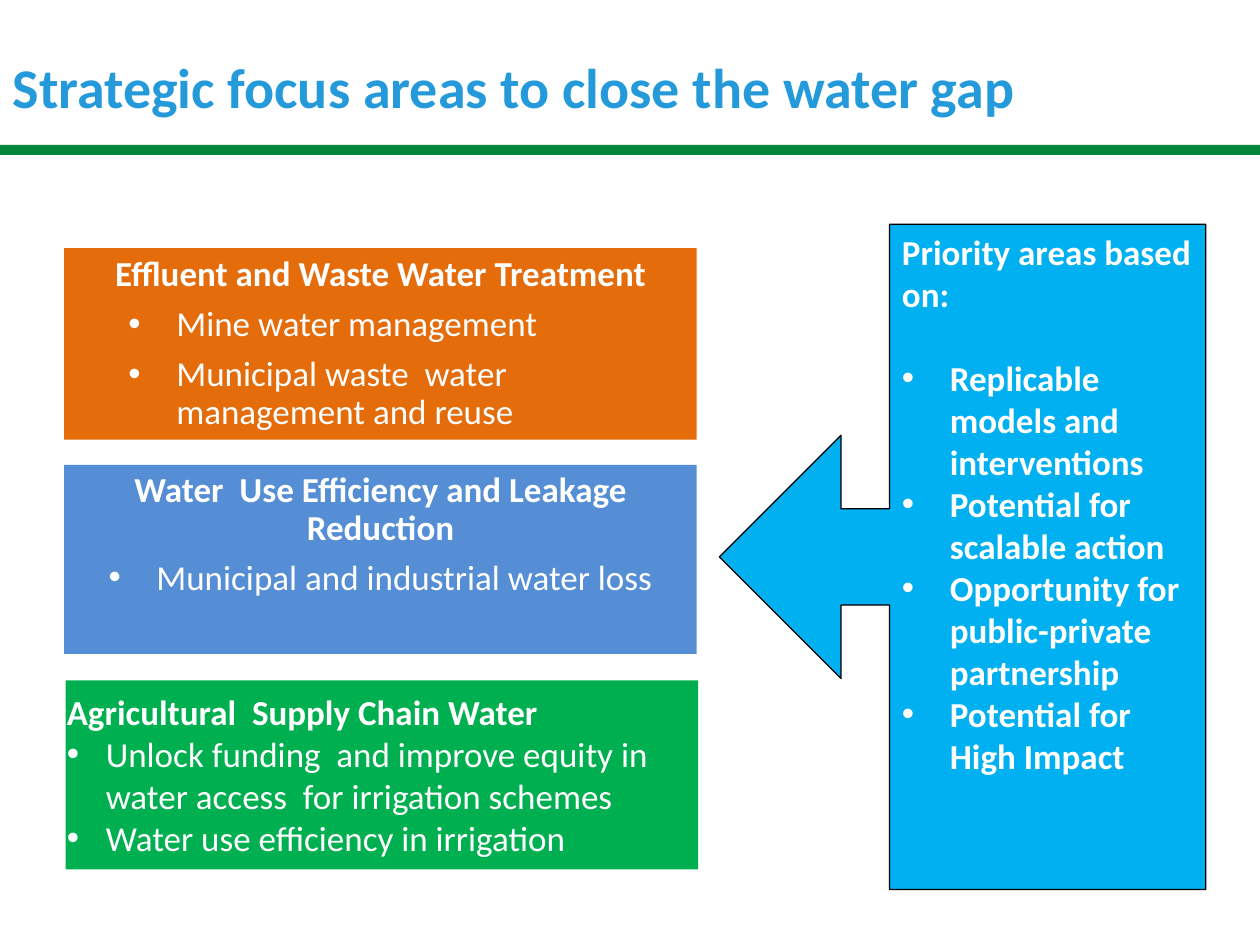
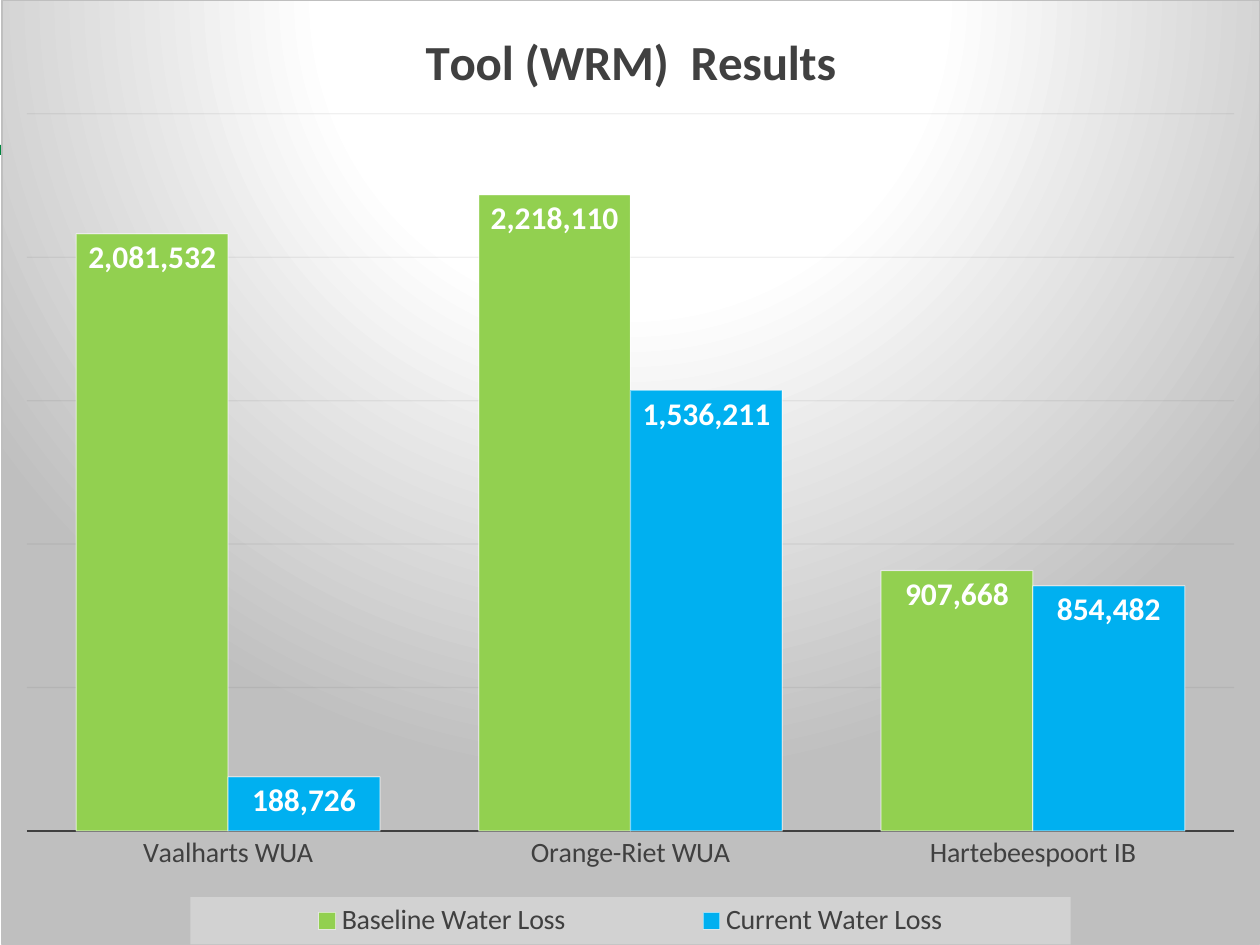
import pptx
import pptx.chart.data
import pptx.dml.color
import pptx.enum.chart
import pptx.enum.shapes
import pptx.enum.text
import pptx.oxml
import pptx.oxml.ns
import pptx.util

Inches = pptx.util.Inches
Pt = pptx.util.Pt
RGB = pptx.dml.color.RGBColor
Align = pptx.enum.text.PP_ALIGN
Anchor = pptx.enum.text.MSO_ANCHOR
Shape = pptx.enum.shapes.MSO_SHAPE
qn = pptx.oxml.ns.qn

FONT = "Calibri"
WHITE = RGB(0xFF, 0xFF, 0xFF)
BLACK = RGB(0, 0, 0)
INK = RGB(0x40, 0x40, 0x40)
GRID = RGB(0x0D, 0x0D, 0x0D)
GREEN = RGB(0x00, 0x86, 0x3D)
TITLE = RGB(0x24, 0x9A, 0xDA)
ORANGE = RGB(0xE4, 0x6C, 0x0A)
BLUE = RGB(0x55, 0x8E, 0xD5)
LEAF = RGB(0x00, 0xB0, 0x50)
SKY = RGB(0x00, 0xB0, 0xF0)
LIME = RGB(0x92, 0xD0, 0x50)


def style(font, size, color, bold=False):
    font.name, font.size, font.bold = FONT, Pt(size), bold
    font.color.rgb = color


def add_block(slide, kind, box, fill):
    shape = slide.shapes.add_shape(kind, *map(Inches, box))
    shape.shadow.inherit = False
    shape.fill.solid()
    shape.fill.fore_color.rgb = fill
    shape.line.fill.background()
    return shape


def add_band(slide):
    add_block(slide, Shape.RECTANGLE, (0, 1.15, 10, 0.08), GREEN)


def add_title(slide, text):
    title = slide.shapes.title
    title.left, title.top, title.width, title.height = map(
        Inches, (0, 0.36, 9.76, 0.79))
    title.text_frame.vertical_anchor = Anchor.MIDDLE
    title.text_frame.margin_bottom = Inches(0.19)
    para = title.text_frame.paragraphs[0]
    para.alignment = Align.LEFT
    run = para.add_run()
    run.text = text
    style(run.font, 32, TITLE, True)


def indent(para, left, hang):
    """Give a paragraph a round bullet with a hanging indent."""
    props = para._p.get_or_add_pPr()
    props.set("marL", str(Inches(left)))
    props.set("indent", str(-Inches(hang)))
    props.append(pptx.oxml.parse_xml(
        f'<a:buFont {pptx.oxml.ns.nsdecls("a")} typeface="Arial"/>'))
    props.append(pptx.oxml.parse_xml(
        f'<a:buChar {pptx.oxml.ns.nsdecls("a")} char="•"/>'))


def fill_text(frame, head, items, left, hang, bold=False,
              aligns=(Align.LEFT, Align.LEFT), tight=False, gap=0):
    """Write a bold heading and its bullets; gap parts the two."""
    frame.word_wrap = True
    for num, text in enumerate([head, *items]):
        para = frame.add_paragraph() if num else frame.paragraphs[0]
        para.alignment = aligns[min(num, 1)]
        if tight:
            para.line_spacing = 0.9
            para.space_after = Pt(7)
        if num == 1 and gap:
            para.space_before = Pt(gap)
        if num:
            indent(para, left, hang)
        run = para.add_run()
        run.text = text
        style(run.font, 20, WHITE, bold or num == 0)


def add_area(slide, box, fill, head, items, foot=0.01, **look):
    shape = add_block(slide, Shape.RECTANGLE, box, fill)
    frame = shape.text_frame
    frame.margin_left = frame.margin_right = frame.margin_top = Inches(0.01)
    frame.margin_bottom = Inches(foot)
    frame.vertical_anchor = Anchor.MIDDLE
    fill_text(frame, head, items, **look)


def add_callout(slide, box, head, items):
    shape = add_block(slide, Shape.LEFT_ARROW_CALLOUT, box, SKY)
    for num, value in enumerate((0.198, 0.25, 0.25, 0.65)):
        shape.adjustments[num] = value
    shape.line.color.rgb = BLACK
    shape.line.width = Pt(0.75)
    shape.text_frame.vertical_anchor = Anchor.TOP
    fill_text(shape.text_frame, head, items, 0.38, 0.38, bold=True, gap=24)


def focus_slide(deck):
    slide = deck.slides.add_slide(deck.slide_layouts[5])
    add_band(slide)
    add_title(slide, "Strategic focus areas to close the water gap")
    add_area(slide, (0.51, 1.97, 5.02, 1.52), ORANGE,
             "Effluent and Waste Water Treatment",
             ["Mine water management",
              "Municipal waste  water management and reuse"],
             left=0.88, hang=0.38, tight=True,
             aligns=(Align.CENTER, Align.LEFT))
    add_area(slide, (0.51, 3.69, 5.02, 1.5), BLUE,
             "Water  Use Efficiency and Leakage Reduction",
             ["Municipal and industrial water loss"],
             foot=0.4, left=0.38, hang=0.38, tight=True,
             aligns=(Align.CENTER, Align.CENTER))
    add_area(slide, (0.52, 5.4, 5.02, 1.5), LEAF,
             "Agricultural  Supply Chain Water",
             ["Unlock funding  and improve equity in water access  "
              "for irrigation schemes",
              "Water use efficiency in irrigation"],
             left=0.31, hang=0.31)
    add_callout(slide, (5.71, 1.78, 3.86, 5.28), "Priority areas based on:",
                ["Replicable models and interventions",
                 "Potential for scalable action",
                 "Opportunity for public-private partnership",
                 "Potential for High Impact"])


def fade_line(node, share):
    """Make the line colours under a chart node partly transparent."""
    for color in node.iterfind(f".//{qn('a:ln')}//{qn('a:srgbClr')}"):
        alpha = color.makeelement(qn("a:alpha"), {"val": str(share * 1000)})
        color.append(alpha)


def place(node, spot, after=None):
    """Fix a chart part at shares of the chart area."""
    for old in node.findall(qn("c:layout")):
        node.remove(old)
    target = "" if after else '<c:layoutTarget val="inner"/>'
    sizes = "".join(f'<c:{tag} val="{val}"/>' for tag, val in
                    zip("xywh", spot))
    layout = pptx.oxml.parse_xml(
        f'<c:layout {pptx.oxml.ns.nsdecls("c")}><c:manualLayout>{target}'
        f'<c:xMode val="edge"/><c:yMode val="edge"/>{sizes}'
        '</c:manualLayout></c:layout>')
    if after:
        node.find(qn(after)).addnext(layout)
    else:
        node.insert(0, layout)


def shade(chart):
    """Give the chart area a grey glow and the legend a pale panel."""
    names = pptx.oxml.ns.nsdecls("c", "a")
    stops = "".join(
        f'<a:gs pos="{spot * 1000}"><a:srgbClr val="{color}"/></a:gs>'
        for spot, color in ((0, "FFFFFF"), (39, "FFFFFF"), (100, "BFBFBF")))
    back = pptx.oxml.parse_xml(
        f'<c:spPr {names}><a:gradFill><a:gsLst>{stops}</a:gsLst>'
        '<a:path path="circle"><a:fillToRect l="50000" t="-80000" '
        'r="50000" b="180000"/></a:path></a:gradFill><a:ln w="9525">'
        '<a:solidFill><a:srgbClr val="BFBFBF"/></a:solidFill></a:ln></c:spPr>')
    chart._chartSpace.find(qn("c:chart")).addnext(back)
    panel = pptx.oxml.parse_xml(
        f'<c:spPr {names}><a:solidFill><a:srgbClr val="F2F2F2">'
        '<a:alpha val="39000"/></a:srgbClr></a:solidFill></c:spPr>')
    chart.legend._element.find(qn("c:overlay")).addnext(panel)


def style_axes(chart):
    cats, vals = chart.category_axis, chart.value_axis
    cats.major_tick_mark = pptx.enum.chart.XL_TICK_MARK.NONE
    style(cats.tick_labels.font, 16, INK)
    cats.format.line.color.rgb = INK
    cats.format.line.width = Pt(1.5)
    vals.visible = False
    vals.minimum_scale, vals.maximum_scale = 0, 2500000
    vals.major_unit = 500000
    vals.tick_labels.number_format = "#,##0"
    vals.tick_labels.number_format_is_linked = False
    grid = vals.major_gridlines.format.line
    grid.color.rgb, grid.width = GRID, Pt(0.75)
    fade_line(vals._element, 6)


def style_bars(plot):
    plot.gap_width, plot.overlap = 65, 0
    plot.vary_by_categories = False
    for series, color in zip(plot.series, (LIME, SKY)):
        series.format.fill.solid()
        series.format.fill.fore_color.rgb = color
        series.format.line.color.rgb = WHITE
        series.format.line.width = Pt(0.75)
        fade_line(series._element, 50)
        labels = series.data_labels
        labels.show_value = True
        labels.position = pptx.enum.chart.XL_LABEL_POSITION.INSIDE_END
        labels.number_format = "#,##0"
        labels.number_format_is_linked = False
        style(labels.font, 18, WHITE, True)


def add_results(slide, box):
    data = pptx.chart.data.CategoryChartData(number_format="#,##0")
    data.categories = ["Vaalharts WUA", "Orange-Riet WUA", "Hartebeespoort IB"]
    data.add_series("Baseline Water Loss", (2081532, 2218110, 907668))
    data.add_series("Current Water Loss", (188726, 1536211, 854482))
    chart = slide.shapes.add_chart(
        pptx.enum.chart.XL_CHART_TYPE.COLUMN_CLUSTERED,
        *map(Inches, box), data).chart
    style(chart.font, 10, BLACK)
    chart.has_title = True
    run = chart.chart_title.text_frame.paragraphs[0].add_run()
    run.text = "Tool (WRM)  Results"
    style(run.font, 28, INK, True)
    chart.has_legend = True
    chart.legend.position = pptx.enum.chart.XL_LEGEND_POSITION.BOTTOM
    chart.legend.include_in_layout = False
    style(chart.legend.font, 16, INK)
    style_axes(chart)
    style_bars(chart.plots[0])
    shade(chart)
    place(chart._chartSpace.chart.plotArea, (0.02, 0.12, 0.96, 0.76))
    place(chart.chart_title._element, (0.33, 0.02), "c:tx")
    place(chart.legend._element, (0.15, 0.95, 0.7, 0.05), "c:legendPos")


def results_slide(deck):
    slide = deck.slides.add_slide(deck.slide_layouts[6])
    add_band(slide)
    add_results(slide, (0.01, 0, 9.99, 7.5))


def main():
    deck = pptx.Presentation()
    deck.slide_width, deck.slide_height = Inches(10), Inches(7.5)
    focus_slide(deck)
    results_slide(deck)
    deck.save("out.pptx")


if __name__ == "__main__":
    main()
